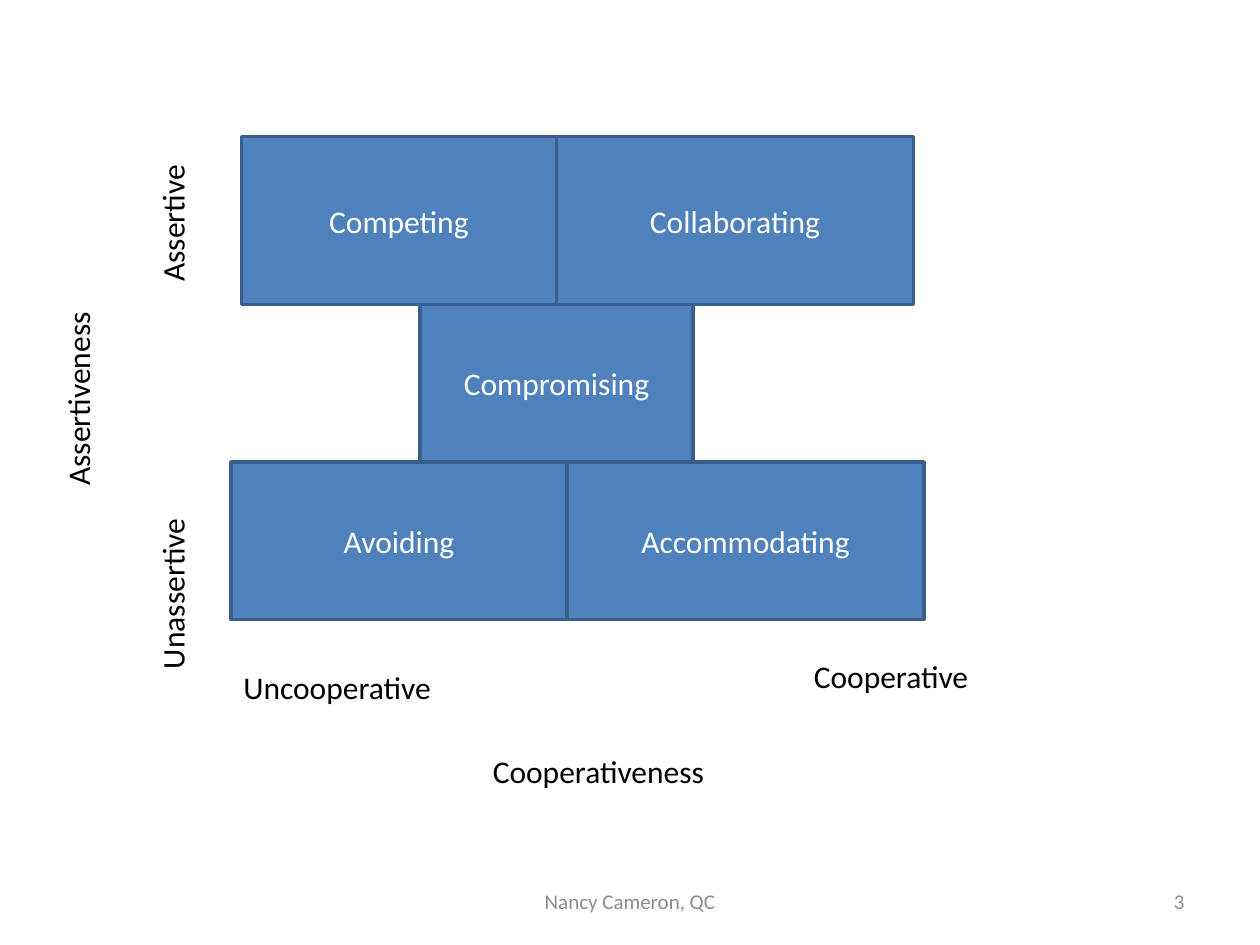
from dataclasses import dataclass

from pptx import Presentation
from pptx.dml.color import RGBColor
from pptx.enum.shapes import MSO_SHAPE
from pptx.enum.text import MSO_ANCHOR, MSO_AUTO_SIZE, PP_ALIGN
from pptx.util import Inches, Pt

RECTANGLE = MSO_SHAPE.RECTANGLE
LEFT, CENTER, RIGHT = PP_ALIGN.LEFT, PP_ALIGN.CENTER, PP_ALIGN.RIGHT
TOP, MIDDLE = MSO_ANCHOR.TOP, MSO_ANCHOR.MIDDLE
GROW, FIXED = MSO_AUTO_SIZE.SHAPE_TO_FIT_TEXT, MSO_AUTO_SIZE.NONE

COLORS = {
    "fill": "4F81BD",
    "border": "3A5F8C",
    "on_fill": "FFFFFF",
    "label": "000000",
    "footer": "8C8C8C",
}
FONT = "Calibri"
GRID = 12  # grid cells per inch, so the slide has 120 columns and 90 rows
COLUMNS, ROWS = 120, 90
LINE_HEIGHT = 4.8
FOOTER_ROW = 83.4
AXIS_WIDTH = 6


@dataclass(frozen=True)
class Area:
    column: float
    row: float
    columns: float
    rows: float = LINE_HEIGHT

    def box(self):
        """Left, top, width and height as slide lengths."""
        cells = (self.column, self.row, self.columns, self.rows)
        return [Inches(cell / GRID) for cell in cells]


@dataclass(frozen=True)
class Mode:
    name: str
    area: Area


@dataclass(frozen=True)
class Label:
    text: str
    area: Area
    align: PP_ALIGN = LEFT
    vertical: bool = False
    wrap: bool = True


MODES = [
    Mode("Competing", Area(23, 13, 30, 16)),
    Mode("Collaborating", Area(53, 13, 34, 16)),
    Mode("Compromising", Area(40, 29, 26, 15)),
    Mode("Avoiding", Area(22, 44, 32, 15)),
    Mode("Accommodating", Area(54, 44, 34, 15)),
]
AXIS_LABELS = [
    Label("Cooperativeness", Area(36, 71, 42), CENTER),
    Label("Uncooperative", Area(22, 63, 24.5)),
    Label("Cooperative", Area(72, 62, 21.4), RIGHT),
    Label("Assertiveness", Area(5, 23, AXIS_WIDTH, 30), CENTER, vertical=True),
    Label("Unassertive", Area(14, 49.2, AXIS_WIDTH, 15.7), vertical=True, wrap=False),
    Label("Assertive", Area(14, 10.4, AXIS_WIDTH, 17.6), vertical=True),
]
FOOTERS = [
    Label("Nancy Cameron, QC", Area(41, FOOTER_ROW, 38), CENTER),
    Label("3", Area(86, FOOTER_ROW, 28), RIGHT),
]


def write(frame, text: str, *, color: str, size=18, align=CENTER, anchor=TOP,
          wrap=True, autosize=FIXED) -> None:
    frame.word_wrap = wrap
    frame.auto_size = autosize
    frame.vertical_anchor = anchor
    paragraph = frame.paragraphs[0]
    paragraph.alignment = align
    run = paragraph.add_run()
    run.text = text
    run.font.name = FONT
    run.font.size = Pt(size)
    run.font.color.rgb = RGBColor.from_string(COLORS[color])


def draw_mode(slide, mode: Mode) -> None:
    block = slide.shapes.add_shape(RECTANGLE, *mode.area.box())
    block.shadow.inherit = False
    block.fill.solid()
    block.fill.fore_color.rgb = RGBColor.from_string(COLORS["fill"])
    block.line.color.rgb = RGBColor.from_string(COLORS["border"])
    block.line.width = Pt(2)
    write(block.text_frame, mode.name, color="on_fill", anchor=MIDDLE)


def draw_label(slide, label: Label, **text_format) -> None:
    frame = slide.shapes.add_textbox(*label.area.box()).text_frame
    write(frame, label.text, align=label.align, wrap=label.wrap, **text_format)
    if label.vertical:
        frame._txBody.bodyPr.set("vert", "vert270")


def main() -> None:
    deck = Presentation()
    deck.slide_width = Inches(COLUMNS / GRID)
    deck.slide_height = Inches(ROWS / GRID)
    slide = deck.slides.add_slide(deck.slide_layouts[6])
    for mode in MODES:
        draw_mode(slide, mode)
    for label in AXIS_LABELS:
        draw_label(slide, label, color="label", autosize=GROW)
    for footer in FOOTERS:
        draw_label(slide, footer, color="footer", size=12, anchor=MIDDLE)
    deck.save("out.pptx")


if __name__ == "__main__":
    main()
